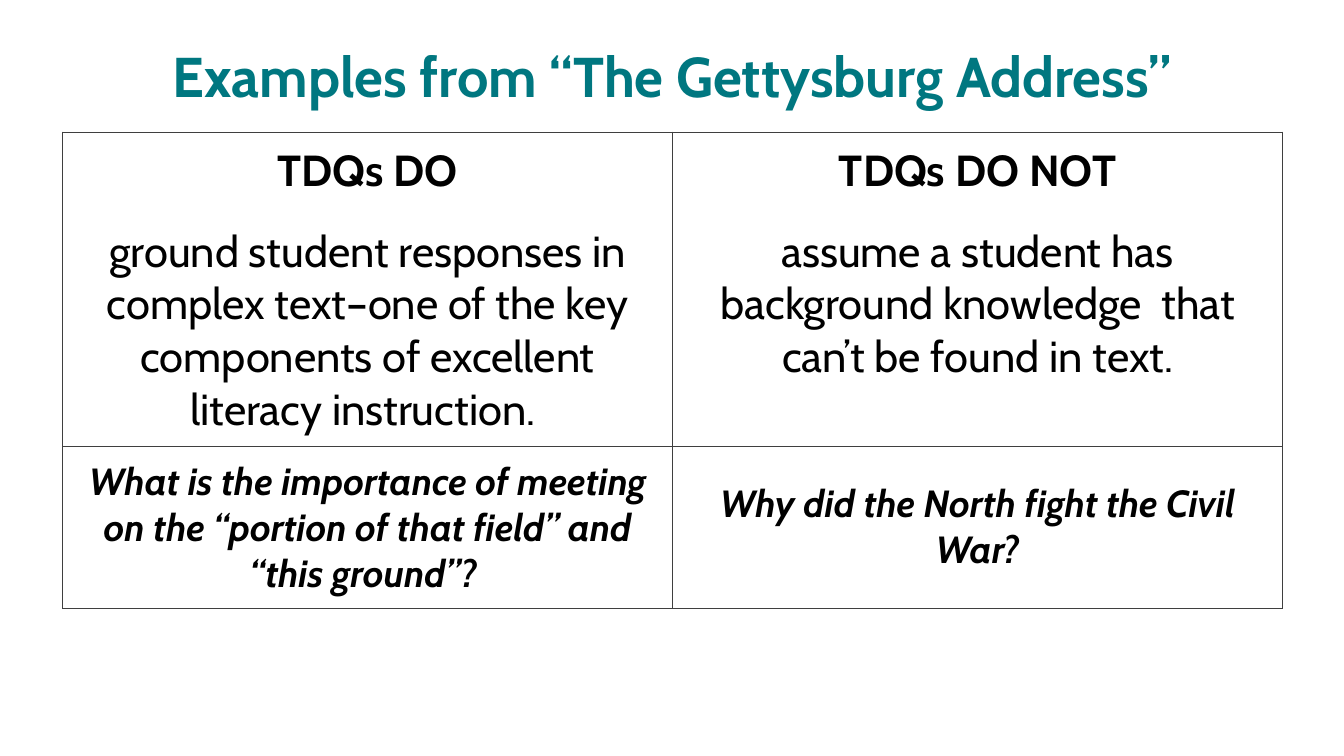
import pptx
import pptx.dml.color
import pptx.enum.text
import pptx.oxml
import pptx.oxml.ns
import pptx.util
from pptx.util import Inches

COLORS = {"title": "007780", "text": "000000", "border": "3F3F3F"}
FONT = "Cabin"
BORDER_WIDTH = 0.75
CELL_INSET = 0.13
HEADING_GAP = 19.5

COLUMNS = [
    {
        "heading": "TDQs DO",
        "rule": "ground student responses in complex text–one of the key "
                "components of excellent literacy instruction. ",
        "question": "What is the importance of meeting on the “portion of that "
                    "field” and “this ground”? ",
    },
    {
        "heading": "TDQs DO NOT",
        "rule": "assume a student has background knowledge  that can’t be "
                "found in text.",
        "question": "Why did the North fight the Civil War?",
    },
]


def write(para, text, size, color="text", bold=False, italic=False, before=0):
    para.alignment = pptx.enum.text.PP_ALIGN.CENTER
    if before:
        para.space_before = pptx.util.Pt(before)
    span = para.add_run()
    span.text = text
    font = span.font
    font.name = FONT
    font.size = pptx.util.Pt(size)
    font.bold = bold
    font.italic = italic
    font.color.rgb = pptx.dml.color.RGBColor.from_string(COLORS[color])


def draw_borders(cell):
    properties = cell._tc.get_or_add_tcPr()
    for position, side in enumerate(("lnL", "lnR", "lnT", "lnB")):
        line = pptx.oxml.parse_xml(
            f'<a:{side} {pptx.oxml.ns.nsdecls("a")} w="{pptx.util.Pt(BORDER_WIDTH)}">'
            f'<a:solidFill><a:srgbClr val="{COLORS["border"]}"/></a:solidFill>'
            f'</a:{side}>'
        )
        properties.insert(position, line)


def format_cell(cell, anchor):
    cell.fill.background()
    cell.vertical_anchor = anchor
    cell.margin_left = cell.margin_right = Inches(CELL_INSET)
    cell.margin_top = cell.margin_bottom = Inches(CELL_INSET)
    draw_borders(cell)


def add_title(page, left, top, width, height):
    box = page.shapes.add_textbox(
        Inches(left), Inches(top), Inches(width), Inches(height))
    frame = box.text_frame
    frame.word_wrap = True
    frame.vertical_anchor = pptx.enum.text.MSO_ANCHOR.TOP
    write(frame.paragraphs[0], "Examples from “The Gettysburg Address”", 40,
          color="title", bold=True)


def add_comparison(page, left, top, width, row_heights):
    """Place the do and do-not columns, with a sample question under each."""
    table = page.shapes.add_table(
        len(row_heights), len(COLUMNS), Inches(left), Inches(top),
        Inches(width), Inches(sum(row_heights))).table
    table.first_row = False
    table.horz_banding = False
    for row, height in zip(table.rows, row_heights):
        row.height = Inches(height)

    for index, column in enumerate(COLUMNS):
        table.columns[index].width = Inches(width / len(COLUMNS))
        rule_cell, question_cell = table.cell(0, index), table.cell(1, index)
        format_cell(rule_cell, pptx.enum.text.MSO_ANCHOR.TOP)
        format_cell(question_cell, pptx.enum.text.MSO_ANCHOR.MIDDLE)
        frame = rule_cell.text_frame
        write(frame.paragraphs[0], column["heading"], 31, bold=True)
        write(frame.add_paragraph(), column["rule"], 31, before=HEADING_GAP)
        write(question_cell.text_frame.paragraphs[0], column["question"], 27,
              bold=True, italic=True)


def main():
    deck = pptx.Presentation()
    deck.slide_width = Inches(13.33)
    deck.slide_height = Inches(7.5)
    page = deck.slides.add_slide(deck.slide_layouts[6])
    add_title(page, 0.36, 0.36, 12.61, 1.04)
    add_comparison(page, 0.62, 1.31, 12.1, (3.09, 1.6))
    deck.save("out.pptx")


if __name__ == "__main__":
    main()
